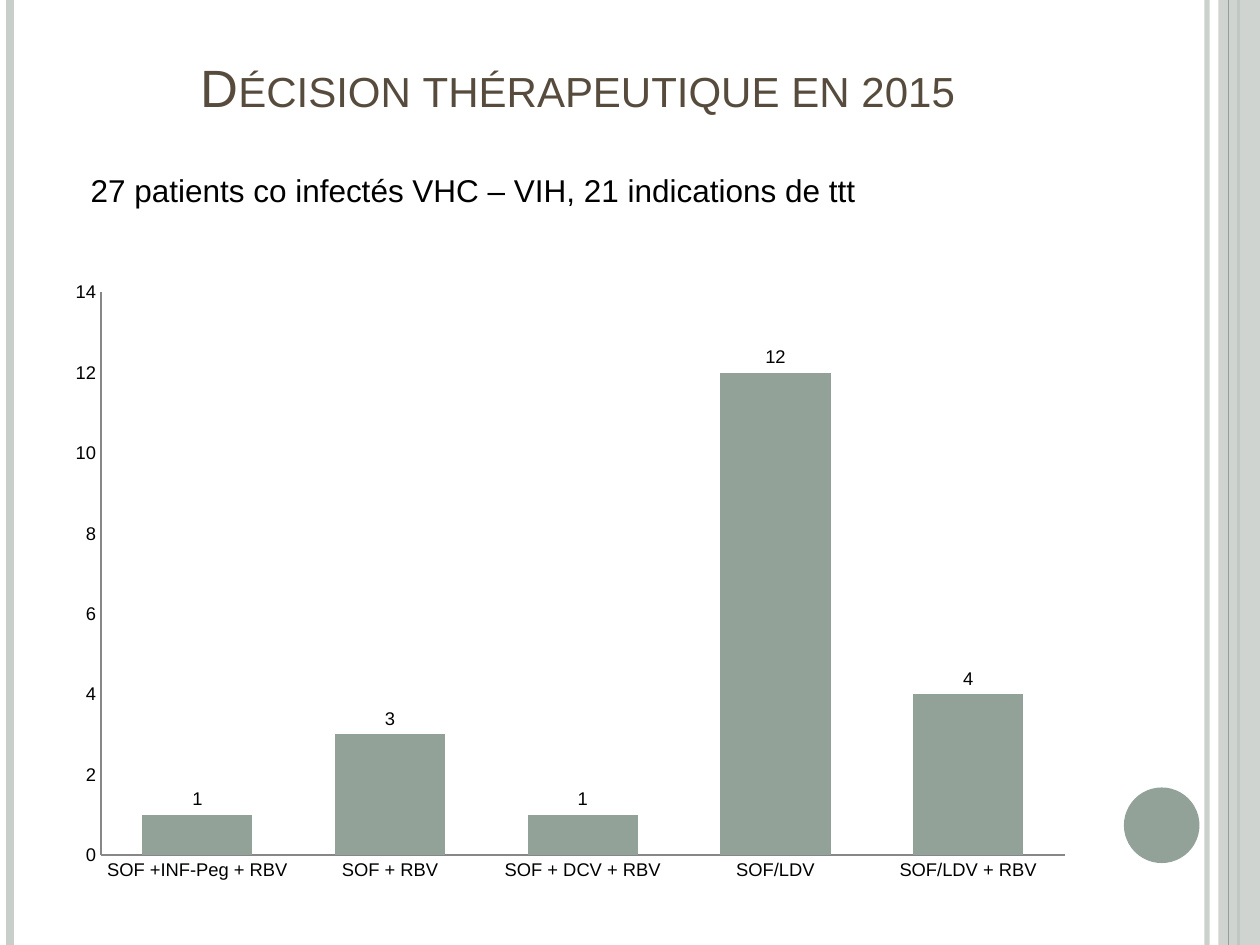
from dataclasses import dataclass

from lxml.etree import SubElement
from pptx import Presentation
from pptx.chart.data import CategoryChartData
from pptx.dml.color import RGBColor
from pptx.enum.chart import XL_CHART_TYPE, XL_LABEL_POSITION, XL_TICK_MARK
from pptx.enum.shapes import MSO_CONNECTOR, MSO_SHAPE
from pptx.enum.text import MSO_ANCHOR, PP_ALIGN
from pptx.oxml import parse_xml
from pptx.oxml.ns import nsdecls, qn
from pptx.util import Inches, Pt

WIDTH, HEIGHT = 10, 7.5
SAGE, PALE_SAGE, BROWN, BLACK, GREY = "93A299", "C8CECA", "564B3C", "000000", "878787"
FONT = "Arial"
MARGIN, CONTENT_WIDTH = 0.5, 8.17


@dataclass
class Stripe:
    x: float
    color: str
    points: float
    opacity: int = 100


@dataclass
class Panel:
    kind: MSO_SHAPE
    box: tuple
    color: str
    opacity: int = 100


# Decoration, from back to front
DECORATION = [
    Stripe(9.58, PALE_SAGE, 3, 93),
    Stripe(0.08, PALE_SAGE, 4.5),
    Stripe(9.83, SAGE, 1.5),
    Panel(MSO_SHAPE.RECTANGLE, (9.67, 0, 0.33, HEIGHT), PALE_SAGE, 87),
    Stripe(9.75, SAGE, 0.75),
    Panel(MSO_SHAPE.OVAL, (8.92, 6.25, 0.6, 0.6), SAGE),
]
TREATMENTS = {
    "SOF +INF-Peg + RBV": 1,
    "SOF + RBV": 3,
    "SOF + DCV + RBV": 1,
    "SOF/LDV": 12,
    "SOF/LDV + RBV": 4,
}
PLOT_AREA = {"x": 0.037, "y": 0.107, "w": 0.936, "h": 0.838}


def rgb(color: str) -> RGBColor:
    return RGBColor.from_string(color)


def apply(target, formats: dict) -> None:
    for name, value in formats.items():
        setattr(target, name, value)


def format_font(font, size: float, color: str) -> None:
    apply(font, {"name": FONT, "size": Pt(size), "bold": False})
    font.color.rgb = rgb(color)


def set_opacity(properties, percent: int) -> None:
    if percent < 100:
        color = next(properties.iter(qn("a:srgbClr")))
        SubElement(color, qn("a:alpha")).set("val", str(percent * 1000))


def draw_stripe(slide, stripe: Stripe) -> None:
    x = Inches(stripe.x)
    connector = slide.shapes.add_connector(MSO_CONNECTOR.STRAIGHT, x, 0, x, Inches(HEIGHT))
    connector.line.color.rgb = rgb(stripe.color)
    connector.line.width = Pt(stripe.points)
    properties = connector._element.spPr
    set_opacity(properties, stripe.opacity)
    SubElement(properties, qn("a:effectLst"))


def draw_panel(slide, panel: Panel) -> None:
    shape = slide.shapes.add_shape(panel.kind, *map(Inches, panel.box))
    shape.shadow.inherit = False
    shape.fill.solid()
    shape.fill.fore_color.rgb = rgb(panel.color)
    shape.line.fill.background()
    set_opacity(shape._element.spPr, panel.opacity)


def write_title(slide, text: str) -> None:
    title = slide.shapes.title
    apply(title, {"left": Inches(MARGIN), "top": Inches(0.3),
                  "width": Inches(CONTENT_WIDTH), "height": Inches(0.69)})
    title.text_frame.text = text
    title.text_frame.vertical_anchor = MSO_ANCHOR.BOTTOM
    paragraph = title.text_frame.paragraphs[0]
    paragraph.alignment = PP_ALIGN.CENTER
    run = paragraph.runs[0]
    format_font(run.font, 30, BROWN)
    run._r.get_or_add_rPr().set("cap", "small")


def write_summary(slide, text: str) -> None:
    box = slide.shapes.add_textbox(*map(Inches, (0.62, 1.31, 6.42, 0.71)))
    box.text_frame.word_wrap = True
    box.text_frame.text = text
    format_font(box.text_frame.paragraphs[0].runs[0].font, 18, BLACK)


def place_plot(chart) -> None:
    plot_area = chart._chartSpace.chart.plotArea
    for old in plot_area.findall(qn("c:layout")):
        plot_area.remove(old)
    modes = '<c:layoutTarget val="inner"/><c:xMode val="edge"/><c:yMode val="edge"/>'
    shares = "".join(f'<c:{name} val="{share}"/>' for name, share in PLOT_AREA.items())
    plot_area.insert(0, parse_xml(
        f'<c:layout {nsdecls("c")}><c:manualLayout>{modes}{shares}</c:manualLayout></c:layout>'))


def draw_chart(slide) -> None:
    data = CategoryChartData()
    data.categories = list(TREATMENTS)
    data.add_series("Series 1", list(TREATMENTS.values()))
    box = map(Inches, (MARGIN, 1.75, CONTENT_WIDTH, 5.33))
    chart = slide.shapes.add_chart(XL_CHART_TYPE.COLUMN_CLUSTERED, *box, data).chart
    apply(chart, {"has_legend": False, "has_title": False})
    format_font(chart.font, 10.5, BLACK)

    # Axes
    for axis in (chart.category_axis, chart.value_axis):
        apply(axis, {"has_major_gridlines": False,
                     "major_tick_mark": XL_TICK_MARK.NONE,
                     "minor_tick_mark": XL_TICK_MARK.NONE})
        axis.format.line.color.rgb = rgb(GREY)
        axis.format.line.width = Pt(0.75)
    apply(chart.value_axis, {"minimum_scale": 0, "maximum_scale": 14, "major_unit": 2})

    # Columns and their values
    plot = chart.plots[0]
    apply(plot, {"gap_width": 75, "vary_by_categories": False, "has_data_labels": True})
    apply(plot.data_labels, {"show_value": True, "position": XL_LABEL_POSITION.OUTSIDE_END})
    fill = plot.series[0].format.fill
    fill.solid()
    fill.fore_color.rgb = rgb(SAGE)
    place_plot(chart)


def main() -> None:
    presentation = Presentation()
    apply(presentation, {"slide_width": Inches(WIDTH), "slide_height": Inches(HEIGHT)})
    title_only = presentation.slide_layouts[5]
    slide = presentation.slides.add_slide(title_only)
    for part in DECORATION:
        draw = draw_stripe if isinstance(part, Stripe) else draw_panel
        draw(slide, part)
    write_title(slide, "Décision thérapeutique en 2015")
    draw_chart(slide)
    write_summary(slide, "27 patients co infectés VHC – VIH, 21 indications de ttt")
    presentation.save("out.pptx")


if __name__ == "__main__":
    main()
